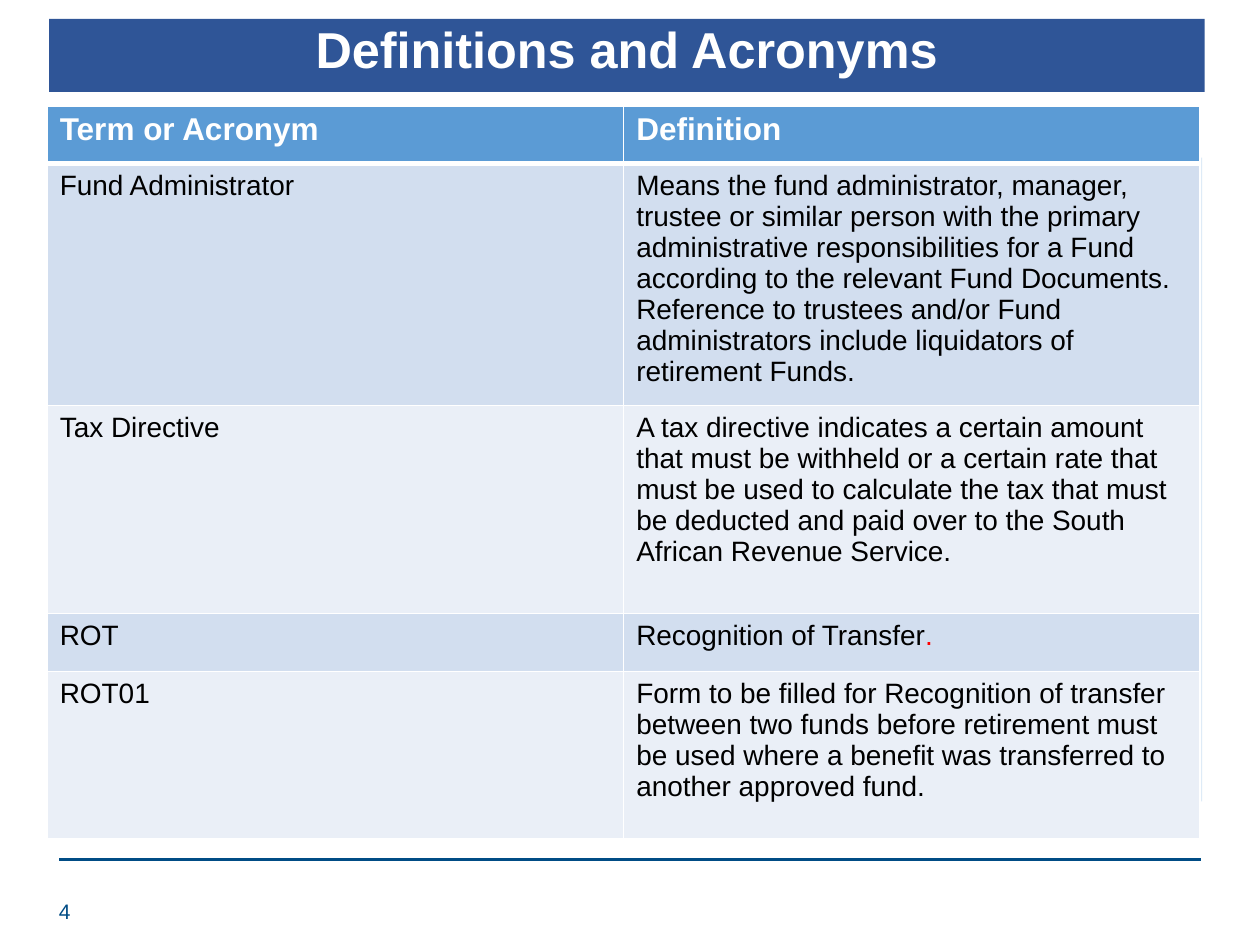
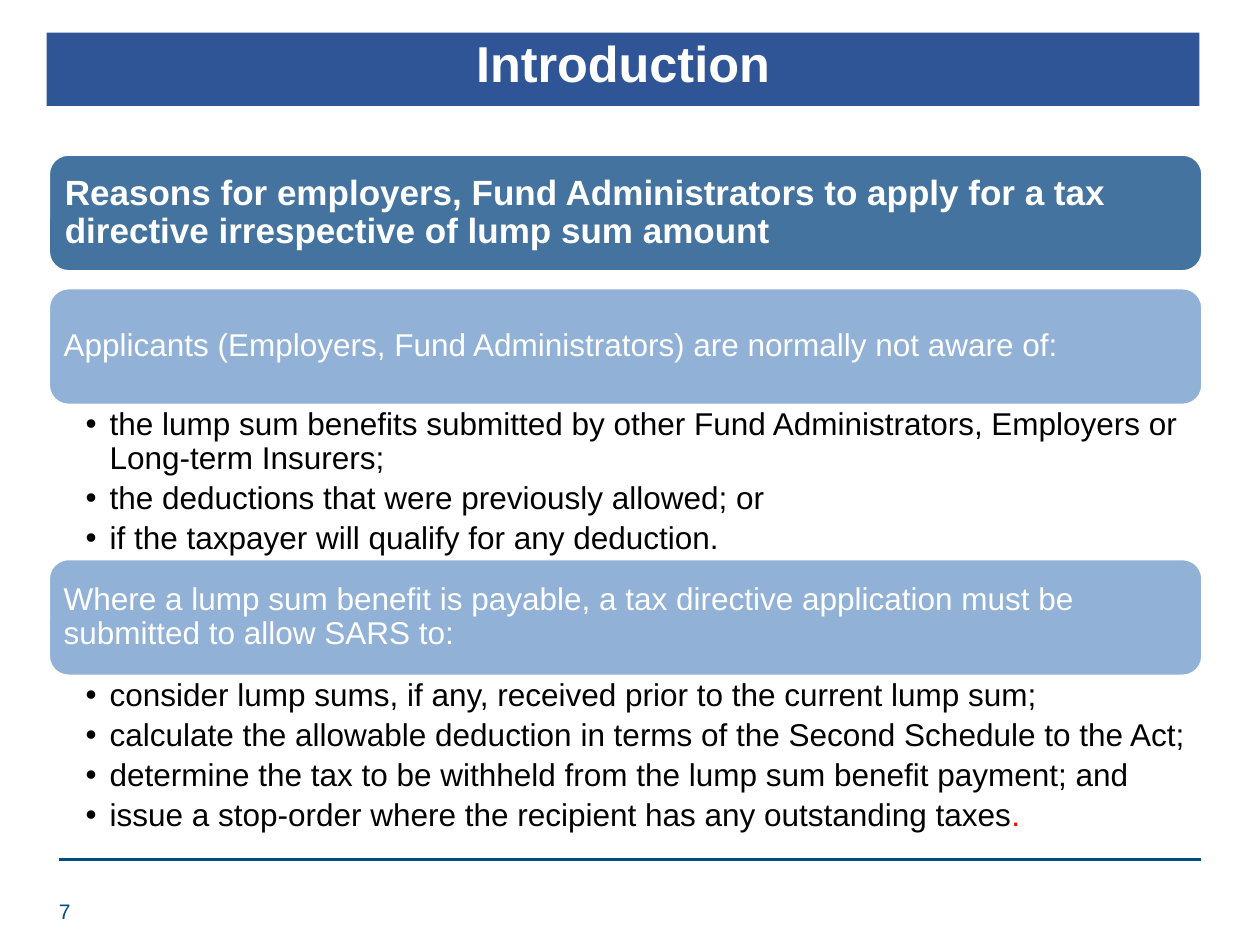
from dataclasses import dataclass

from lxml import etree
from pptx import Presentation
from pptx.dml.color import RGBColor
from pptx.enum.shapes import MSO_CONNECTOR, MSO_SHAPE
from pptx.enum.text import MSO_ANCHOR, MSO_AUTO_SIZE, PP_ALIGN
from pptx.oxml.ns import qn
from pptx.util import Inches, Pt

LEFT, CENTER = PP_ALIGN.LEFT, PP_ALIGN.CENTER
TOP, MIDDLE = MSO_ANCHOR.TOP, MSO_ANCHOR.MIDDLE
RECT, ROUNDED = MSO_SHAPE.RECTANGLE, MSO_SHAPE.ROUNDED_RECTANGLE
STRAIGHT, NO_FIT = MSO_CONNECTOR.STRAIGHT, MSO_AUTO_SIZE.NONE
TITLE_ONLY, TWO_CONTENT = 5, 3

FONT = "Arial"
COLORS = {
    "white": "FFFFFF", "black": "000000", "red": "FF0000",
    "band": "2F5597", "rule": "004C85", "backdrop": "DEEBF7",
    "header": "5B9BD5", "row_dark": "D2DEEF", "row_light": "EAEFF7",
    "reason": "43739E", "lead": "91B1D6",
}

# Grid of 100 columns by 75 rows
WIDTH, HEIGHT = Inches(10), Inches(7.5)
COLUMNS, ROWS = 100, 75
CONTENT_LEFT, CONTENT_WIDTH = 3.9, 91.5
PANEL_HEIGHT, PANEL_GAP = 9.2, 1.4


@dataclass(frozen=True)
class Area:
    col: float
    row: float
    cols: float
    rows: float

    def box(self) -> tuple[int, int, int, int]:
        return (across(self.col), down(self.row),
                across(self.cols), down(self.rows))


@dataclass(frozen=True)
class Point:
    text: str
    red_tail: str = ""


@dataclass(frozen=True)
class Term:
    name: str
    meaning: Point
    rows: float


@dataclass(frozen=True)
class Section:
    lead: str
    points: tuple[Point, ...]
    rows: float


TERMS = (
    Term("Fund Administrator", Point(
        "Means the fund administrator, manager, trustee or similar person with "
        "the primary administrative responsibilities for a Fund according to "
        "the relevant Fund Documents. Reference to trustees and/or Fund "
        "administrators include liquidators of retirement Funds."), 19.2),
    Term("Tax Directive", Point(
        "A tax directive indicates a certain amount that must be withheld or a "
        "certain rate that must be used to calculate the tax that must be "
        "deducted and paid over to the South African Revenue Service."), 16.5),
    Term("ROT", Point("Recognition of Transfer", "."), 4.6),
    Term("ROT01", Point(
        "Form to be filled for Recognition of transfer between two funds before "
        "retirement must be used where a benefit was transferred to another "
        "approved fund."), 13.3),
)
REASON = ("Reasons for employers, Fund Administrators to apply for a tax "
          "directive irrespective of lump sum amount")
SECTIONS = (
    Section("Applicants (Employers, Fund Administrators) are normally not aware of:", (
        Point("the lump sum benefits submitted by other Fund Administrators, "
              "Employers or Long-term Insurers;"),
        Point("the deductions that were previously allowed; or"),
        Point("if the taxpayer will qualify for any deduction."),
    ), 12.3),
    Section("Where a lump sum benefit is payable, a tax directive application "
            "must be submitted to allow SARS to:", (
        Point("consider lump sums, if any, received prior to the current lump sum;"),
        Point("calculate the allowable deduction in terms of the Second Schedule "
              "to the Act;"),
        Point("determine the tax to be withheld from the lump sum benefit "
              "payment; and"),
        Point("issue a stop-order where the recipient has any outstanding taxes", "."),
    ), 12.7),
)


def across(cols: float) -> int:
    return round(WIDTH * cols / COLUMNS)


def down(rows: float) -> int:
    return round(HEIGHT * rows / ROWS)


def rgb(name: str) -> RGBColor:
    return RGBColor.from_string(COLORS[name])


def write(p, text: str, *, size: float, color: str, bold: bool = False,
          align=LEFT, spacing: float = 1.0, after: float = 0,
          red_tail: str = "") -> None:
    p.alignment, p.line_spacing = align, spacing
    p.space_before, p.space_after = Pt(0), Pt(after)
    for part, tint in ((text, color), (red_tail, "red")):
        if part:
            r = p.add_run()
            r.text = part
            r.font.name, r.font.size, r.font.bold = FONT, Pt(size), bold
            r.font.color.rgb = rgb(tint)


def frame(sp, *, anchor=TOP, insets=(0.1, 0.05, 0.1, 0.05)):
    """Set wrapping, anchor and insets (left, top, right, bottom in inches)."""
    tf = sp.text_frame
    tf.word_wrap, tf.auto_size, tf.vertical_anchor = True, NO_FIT, anchor
    tf.margin_left, tf.margin_top, tf.margin_right, tf.margin_bottom = map(Inches, insets)
    return tf


def place(sp, area: Area) -> None:
    sp.left, sp.top, sp.width, sp.height = area.box()


def add_block(s, kind, area: Area, fill: str, line: str = ""):
    sp = s.shapes.add_shape(kind, *area.box())
    sp.shadow.inherit = False
    sp.fill.solid()
    sp.fill.fore_color.rgb = rgb(fill)
    if line:
        sp.line.color.rgb, sp.line.width = rgb(line), Pt(1)
    else:
        sp.line.fill.background()
    return sp


def add_page(prs, layout: int, title: str, title_area: Area, number: int):
    """Add a slide with its title band, bottom rule and page number."""
    s = prs.slides.add_slide(prs.slide_layouts[layout])
    sp = s.shapes.title
    place(sp, title_area)
    sp.fill.solid()
    sp.fill.fore_color.rgb = rgb("band")
    write(frame(sp).paragraphs[0], title, size=28.8, color="white", bold=True,
          align=CENTER, spacing=0.9)

    rule = s.shapes.add_connector(STRAIGHT, across(4.7), down(68.2),
                                  across(95.3), down(68.2))
    rule.line.color.rgb, rule.line.width = rgb("rule"), Pt(2)
    etree.SubElement(rule._element.spPr, qn("a:effectLst"))

    sp = s.shapes.add_textbox(*Area(3.7, 70.3, 4.6, 4).box())
    write(frame(sp, anchor=MIDDLE).paragraphs[0], str(number), size=12, color="rule")
    return s


def set_borders(cell, bottom: float) -> None:
    tc_pr = cell._tc.get_or_add_tcPr()
    for side, width in (("L", 1), ("R", 1), ("T", 1), ("B", bottom)):
        ln = etree.SubElement(tc_pr, qn(f"a:ln{side}"), w=str(Pt(width)))
        fill = etree.SubElement(ln, qn("a:solidFill"))
        etree.SubElement(fill, qn("a:srgbClr"), val=COLORS["white"])


def fill_cell(cell, point: Point, fill: str, *, size: float, color: str,
              bold: bool = False, bottom: float = 1) -> None:
    set_borders(cell, bottom)
    cell.fill.solid()
    cell.fill.fore_color.rgb = rgb(fill)
    write(cell.text_frame.paragraphs[0], point.text, size=size, color=color,
          bold=bold, red_tail=point.red_tail)


def add_terms_table(s, header_rows: float = 4.6) -> None:
    heights = [header_rows] + [term.rows for term in TERMS]
    area = Area(3.75, 8.4, CONTENT_WIDTH, sum(heights))
    table = s.shapes.add_table(len(heights), 2, *area.box()).table
    for column in table.columns:
        column.width = across(CONTENT_WIDTH / 2)
    for row, height in zip(table.rows, heights):
        row.height = down(height)
    for j, heading in enumerate(("Term or Acronym", "Definition")):
        fill_cell(table.cell(0, j), Point(heading), "header", size=18,
                  color="white", bold=True, bottom=3)
    for i, term in enumerate(TERMS, start=1):
        fill = "row_dark" if i % 2 else "row_light"
        for j, point in enumerate((Point(term.name), term.meaning)):
            fill_cell(table.cell(i, j), point, fill, size=16, color="black")


def add_panel(s, row: float, text: str, fill: str, *, size: float,
              inset: float, bold: bool = False) -> None:
    area = Area(CONTENT_LEFT, row, CONTENT_WIDTH, PANEL_HEIGHT)
    sp = add_block(s, ROUNDED, area, fill, line="white")
    tf = frame(sp, anchor=MIDDLE, insets=(inset,) * 4)
    write(tf.paragraphs[0], text, size=size, color="white", bold=bold, spacing=0.9)


def fill_list(sp, area: Area, points: tuple[Point, ...]) -> None:
    place(sp, area)
    tf = frame(sp, insets=(0.29, 0.03, 0.05, 0.03))
    for i, point in enumerate(points):
        p = tf.add_paragraph() if i else tf.paragraphs[0]
        p_pr = p._p.get_or_add_pPr()
        p_pr.set("marL", str(Inches(0.19)))
        p_pr.set("indent", str(-Inches(0.19)))
        etree.SubElement(p_pr, qn("a:buChar"), char="•")
        write(p, point.text, size=18, color="black", spacing=0.9, after=3.5,
              red_tail=point.red_tail)


def build_definitions(prs) -> None:
    s = add_page(prs, TITLE_ONLY, "Definitions and Acronyms",
                 Area(3.9, 1.5, 91.7, 5.8), 4)
    add_block(s, RECT, Area(CONTENT_LEFT, 12.5, CONTENT_WIDTH, 51.1), "backdrop")
    add_terms_table(s)


def build_introduction(prs) -> None:
    s = add_page(prs, TWO_CONTENT, "Introduction", Area(3.7, 2.6, 91.5, 5.8), 7)
    row = 12.3
    add_panel(s, row, REASON, "reason", size=20, inset=0.08, bold=True)
    row += PANEL_HEIGHT + PANEL_GAP
    for idx, section in enumerate(SECTIONS, start=1):
        add_panel(s, row, section.lead, "lead", size=18, inset=0.07)
        row += PANEL_HEIGHT
        fill_list(s.placeholders[idx],
                  Area(CONTENT_LEFT, row, CONTENT_WIDTH, section.rows), section.points)
        row += section.rows


def main() -> None:
    prs = Presentation()
    prs.slide_width, prs.slide_height = WIDTH, HEIGHT
    build_definitions(prs)
    build_introduction(prs)
    prs.save("out.pptx")


if __name__ == "__main__":
    main()
